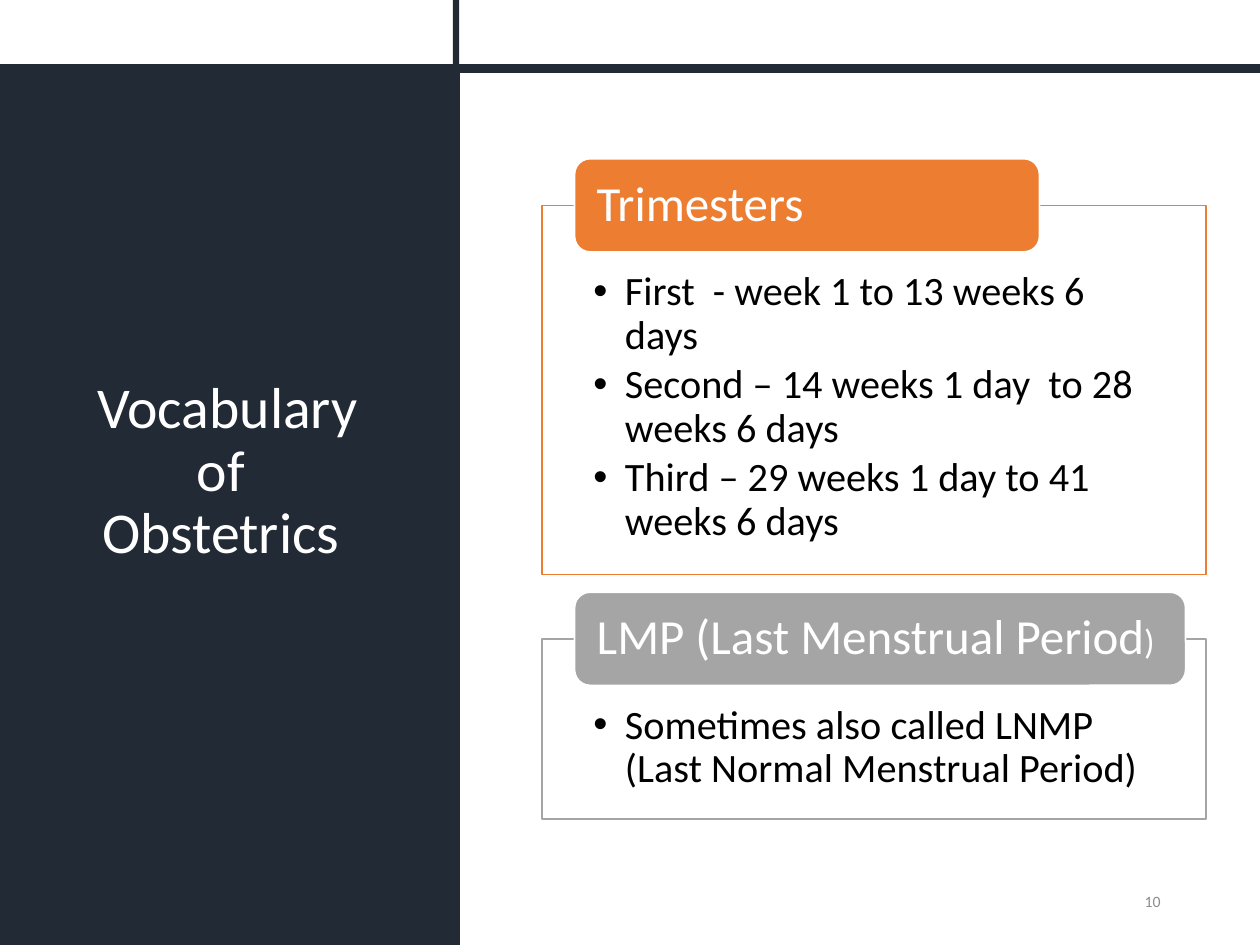
"""Build the obstetrics vocabulary slide."""
import dataclasses

import lxml.etree
import pptx
import pptx.dml.color
import pptx.enum.shapes
import pptx.enum.text
import pptx.oxml.ns
import pptx.util

COLUMNS, ROWS = 100, 75
CELL = pptx.util.Inches(0.1)
NAVY, WHITE, BLACK, GRAY = "222A35", "FFFFFF", "000000", "8C8C8C"
ORANGE, SILVER = "ED7D31", "A5A5A5"
PANEL_LEFT, PANEL_WIDTH = 43, 52.7
TAB_LEFT, TAB_HEIGHT = 45.6, 7.4
ALIGN = pptx.enum.text.PP_ALIGN
ANCHOR = pptx.enum.text.MSO_ANCHOR
SHAPE = pptx.enum.shapes.MSO_SHAPE


@dataclasses.dataclass(frozen=True)
class Box:
    """A rectangle in grid columns and rows."""

    left: float
    top: float
    width: float
    height: float

    def lengths(self) -> list[int]:
        """Return left, top, width and height in slide units."""
        return [round(value * CELL) for value in dataclasses.astuple(self)]


@dataclasses.dataclass(frozen=True)
class Section:
    """A bulleted panel with a heading tab across its top edge."""

    heading: tuple[tuple[str, int], ...]
    items: tuple[str, ...]
    color: str
    top: float
    height: float
    tab_width: float


SECTIONS = (
    Section(
        (("Trimesters", 28),),
        (
            "First  - week 1 to 13 weeks 6 days",
            "Second – 14 weeks 1 day  to 28 weeks 6 days",
            "Third – 29 weeks 1 day to 41 weeks 6 days",
        ),
        ORANGE, 16.3, 29.3, 36.9,
    ),
    Section(
        (("LMP (Last Menstrual Period", 28), (")", 20)),
        ("Sometimes also called LNMP  (Last Normal Menstrual Period)",),
        SILVER, 50.7, 14.3, 48.5,
    ),
)


def rgb(color: str) -> pptx.dml.color.RGBColor:
    """Turn a hex string into a colour."""
    return pptx.dml.color.RGBColor.from_string(color)


def place(shape, box: Box) -> None:
    """Move and size a shape on the grid."""
    shape.left, shape.top, shape.width, shape.height = box.lengths()


def paint(shape, fill: str, line: str | None = None) -> None:
    """Set a solid fill and an optional one-point outline."""
    shape.fill.solid()
    shape.fill.fore_color.rgb = rgb(fill)
    if line:
        shape.line.color.rgb = rgb(line)
        shape.line.width = pptx.util.Pt(1)
    else:
        shape.line.fill.background()


def add_block(slide, kind, box: Box, fill: str, line: str | None = None):
    """Add a flat preset shape."""
    shape = slide.shapes.add_shape(kind, *box.lengths())
    shape.shadow.inherit = False
    paint(shape, fill, line)
    return shape


def set_frame(shape, anchor, insets: tuple[float, float, float, float]):
    """Set wrapping, anchor and insets in inches, and return the frame."""
    frame = shape.text_frame
    frame.word_wrap = True
    frame.auto_size = pptx.enum.text.MSO_AUTO_SIZE.NONE
    frame.vertical_anchor = anchor
    (frame.margin_left, frame.margin_top,
     frame.margin_right, frame.margin_bottom) = map(pptx.util.Inches, insets)
    return frame


def write(paragraph, text: str, *, size: float, color: str,
          align=ALIGN.LEFT, spacing: float = 0.9, after: float = 0) -> None:
    """Add formatted text to a paragraph, with line breaks at newlines."""
    paragraph.alignment = align
    paragraph.line_spacing = spacing
    paragraph.space_before = pptx.util.Pt(0)
    paragraph.space_after = pptx.util.Pt(after)
    for index, part in enumerate(text.split("\n")):
        if index:
            paragraph.add_line_break()
        run = paragraph.add_run()
        run.text = part
        run.font.name = "Calibri"
        run.font.size = pptx.util.Pt(size)
        run.font.color.rgb = rgb(color)


def add_bullet(paragraph) -> None:
    """Give a paragraph a round bullet and a hanging indent."""
    properties = paragraph._p.get_or_add_pPr()
    indent = pptx.util.Inches(0.25)
    properties.set("marL", str(indent))
    properties.set("indent", str(-indent))
    bullet = lxml.etree.SubElement(properties, pptx.oxml.ns.qn("a:buChar"))
    bullet.set("char", "•")


def draw_title(slide) -> None:
    """Draw the sidebar with the title on it."""
    add_block(slide, SHAPE.RECTANGLE, Box(0, 5.8, 36.5, 69.2), NAVY)
    title = slide.shapes.title
    slide.shapes._spTree.append(title._element)
    place(title, Box(4.9, 8.4, 26.3, 58.2))
    frame = set_frame(title, ANCHOR.MIDDLE, (0.1, 0.05, 0.1, 0.05))
    write(frame.paragraphs[0], "Vocabulary of \nObstetrics ",
          size=33, color=WHITE, align=ALIGN.CENTER)


def draw_section(slide, body, section: Section) -> None:
    """Fill a body placeholder as a panel and add its heading tab."""
    place(body, Box(PANEL_LEFT, section.top, PANEL_WIDTH, section.height))
    paint(body, WHITE, section.color)
    frame = set_frame(body, ANCHOR.TOP, (0.41, 0.52, 0.41, 0.18))
    for index, item in enumerate(section.items):
        paragraph = frame.add_paragraph() if index else frame.paragraphs[0]
        write(paragraph, item, size=23, color=BLACK, after=3.5)
        add_bullet(paragraph)

    tab_box = Box(TAB_LEFT, section.top - TAB_HEIGHT / 2,
                  section.tab_width, TAB_HEIGHT)
    tab = add_block(slide, SHAPE.ROUNDED_RECTANGLE, tab_box,
                    section.color, WHITE)
    frame = set_frame(tab, ANCHOR.MIDDLE, (0.14, 0, 0.1, 0))
    for text, size in section.heading:
        write(frame.paragraphs[0], text, size=size, color=WHITE)


def draw_page_number(slide) -> None:
    """Write the page number at the lower right."""
    text_box = slide.shapes.add_textbox(*Box(70.6, 69.5, 22.5, 4).lengths())
    frame = set_frame(text_box, ANCHOR.MIDDLE, (0.1, 0.05, 0.1, 0.05))
    write(frame.paragraphs[0], "10", size=9, color=GRAY,
          align=ALIGN.RIGHT, spacing=1, after=6)


def main() -> None:
    """Build and save the presentation."""
    presentation = pptx.Presentation()
    presentation.slide_width = COLUMNS * CELL
    presentation.slide_height = ROWS * CELL
    slide = presentation.slides.add_slide(presentation.slide_layouts[3])
    draw_title(slide)
    add_block(slide, SHAPE.RECTANGLE, Box(35.95, 0, 0.5, ROWS), NAVY)
    add_block(slide, SHAPE.RECTANGLE, Box(0, 5.1, COLUMNS, 0.7), NAVY)
    draw_page_number(slide)
    for index, section in enumerate(SECTIONS, start=1):
        draw_section(slide, slide.placeholders[index], section)
    presentation.save("out.pptx")


if __name__ == "__main__":
    main()
